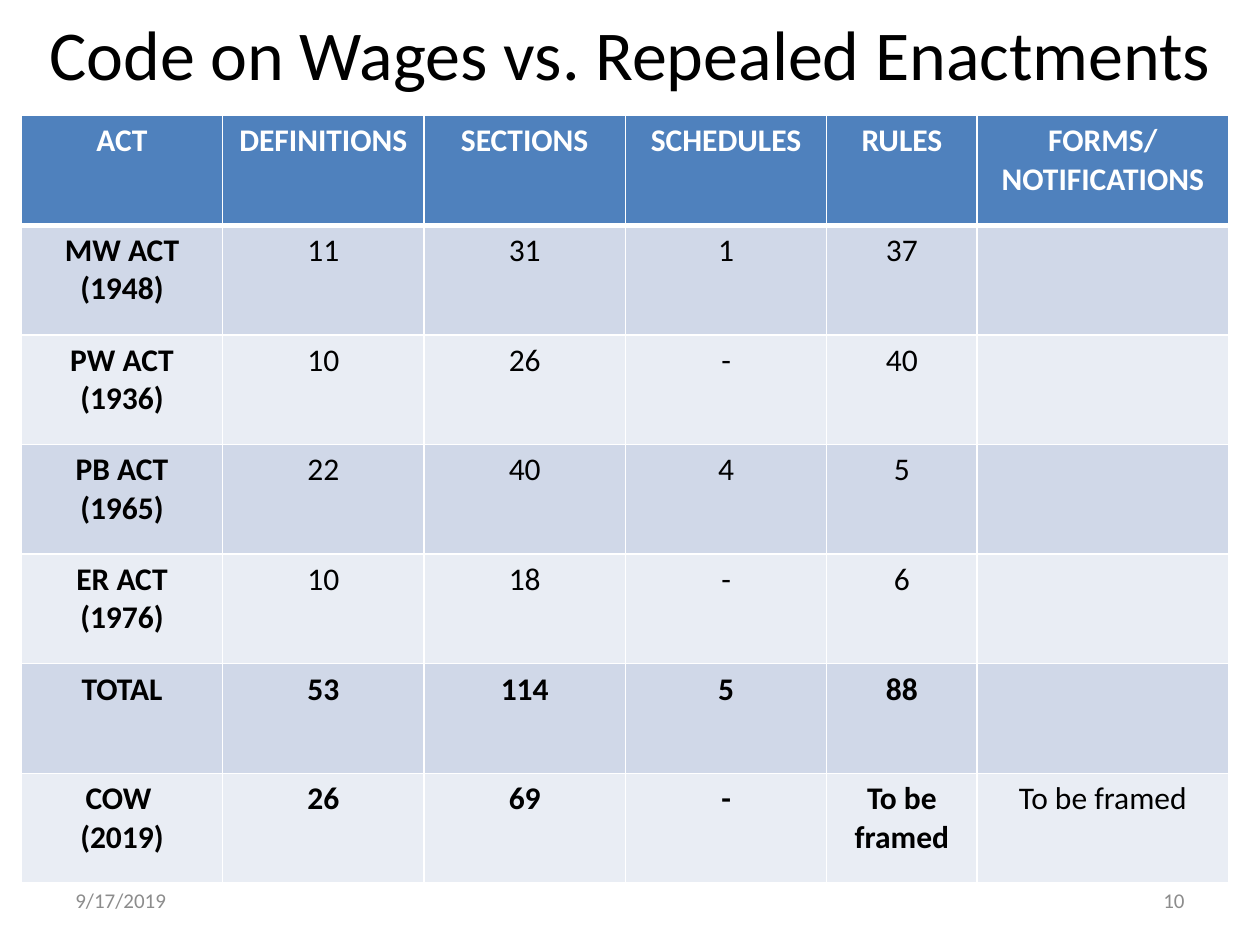
"""Build a slide that compares the Code on Wages with the acts it repeals."""
from dataclasses import dataclass

from lxml.etree import SubElement
from pptx import Presentation
from pptx.dml.color import RGBColor as Rgb
from pptx.enum.text import MSO_ANCHOR as Anchor, MSO_AUTO_SIZE as Auto, PP_ALIGN as Align
from pptx.oxml.ns import qn
from pptx.util import Cm, Pt

HUES = {"head": "4F81BD", "odd": "D0D8E8", "even": "E9EDF4",
        "white": "FFFFFF", "black": "000000", "gray": "8C8C8C"}
FONT = "Calibri"
WIDTHS = [4.06] * 4 + [3.03, 5.07]
HIGH = 2.21


@dataclass
class Row:
    cells: list[str]
    bold: int


@dataclass
class Note:
    text: str
    left: float
    align: Align


ROWS = [
    Row(["ACT", "DEFINITIONS", "SECTIONS", "SCHEDULES", "RULES", "FORMS/NOTIFICATIONS"], 6),
    Row(["MW ACT\n(1948)", "11", "31", "1", "37", ""], 1),
    Row(["PW ACT\n(1936)", "10", "26", "-", "40", ""], 1),
    Row(["PB ACT\n(1965)", "22", "40", "4", "5", ""], 1),
    Row(["ER ACT\n(1976)", "10", "18", "-", "6", ""], 1),
    Row(["TOTAL", "53", "114", "5", "88", ""], 5),
    Row(["COW \n(2019)", "26", "69", "-", "To be framed", "To be framed"], 5),
]
NOTES = [Note("9/17/2019", 1.27, Align.LEFT), Note("10", 18.2, Align.RIGHT)]


def style(frame, size: int, hue: str, align: Align, bold: bool = False) -> None:
    """Format every paragraph and run of a text frame."""
    for para in frame.paragraphs:
        para.alignment = align
        para.font.size = Pt(size)
        for run in para.runs:
            font = run.font
            font.name, font.size, font.bold = FONT, Pt(size), bold
            font.color.rgb = Rgb.from_string(HUES[hue])


def edge(cell, side: str, width: int) -> None:
    """Add one white border to a cell."""
    line = SubElement(cell._tc.get_or_add_tcPr(), qn(f"a:ln{side}"), w=str(Pt(width)))
    fill = SubElement(line, qn("a:solidFill"))
    SubElement(fill, qn("a:srgbClr"), val=HUES["white"])


def draw_title(slide, text: str) -> None:
    """Fill and place the title."""
    title = slide.shapes.title
    title.left, title.top, title.width, title.height = Cm(0), Cm(0), Cm(25.4), Cm(2.12)
    frame = title.text_frame
    frame.text = text
    frame.auto_size = Auto.NONE
    frame.vertical_anchor = Anchor.MIDDLE
    style(frame, 40, "black", Align.CENTER)


def draw_table(slide, rows: list[Row]) -> None:
    """Draw the banded table of acts."""
    table = slide.shapes.add_table(len(rows), len(WIDTHS), Cm(0.43), Cm(2.33),
                                   Cm(sum(WIDTHS)), Cm(HIGH * len(rows))).table
    for col, width in zip(table.columns, WIDTHS):
        col.width = Cm(width)
    for i, row in enumerate(rows):
        table.rows[i].height = Cm(HIGH)
        band = "head" if i == 0 else "odd" if i % 2 else "even"
        for j, text in enumerate(row.cells):
            cell = table.cell(i, j)
            cell.text_frame.text = text
            style(cell.text_frame, 18, "black" if i else "white", Align.CENTER, j < row.bold)
            for side in "LRTB":
                edge(cell, side, 3 if (i, side) in [(0, "B"), (1, "T")] else 1)
            cell.fill.solid()
            cell.fill.fore_color.rgb = Rgb.from_string(HUES[band])


def draw_note(slide, note: Note) -> None:
    """Draw one footer text."""
    frame = slide.shapes.add_textbox(Cm(note.left), Cm(17.65), Cm(5.93), Cm(1.01)).text_frame
    frame.word_wrap = True
    frame.vertical_anchor = Anchor.MIDDLE
    frame.text = note.text
    style(frame, 12, "gray", note.align)


def main() -> None:
    """Build and save the deck."""
    deck = Presentation()
    deck.slide_width, deck.slide_height = Cm(25.4), Cm(19.05)
    slide = deck.slides.add_slide(deck.slide_layouts[5])
    draw_title(slide, "Code on Wages vs. Repealed Enactments")
    draw_table(slide, ROWS)
    for note in NOTES:
        draw_note(slide, note)
    deck.save("out.pptx")


if __name__ == "__main__":
    main()
